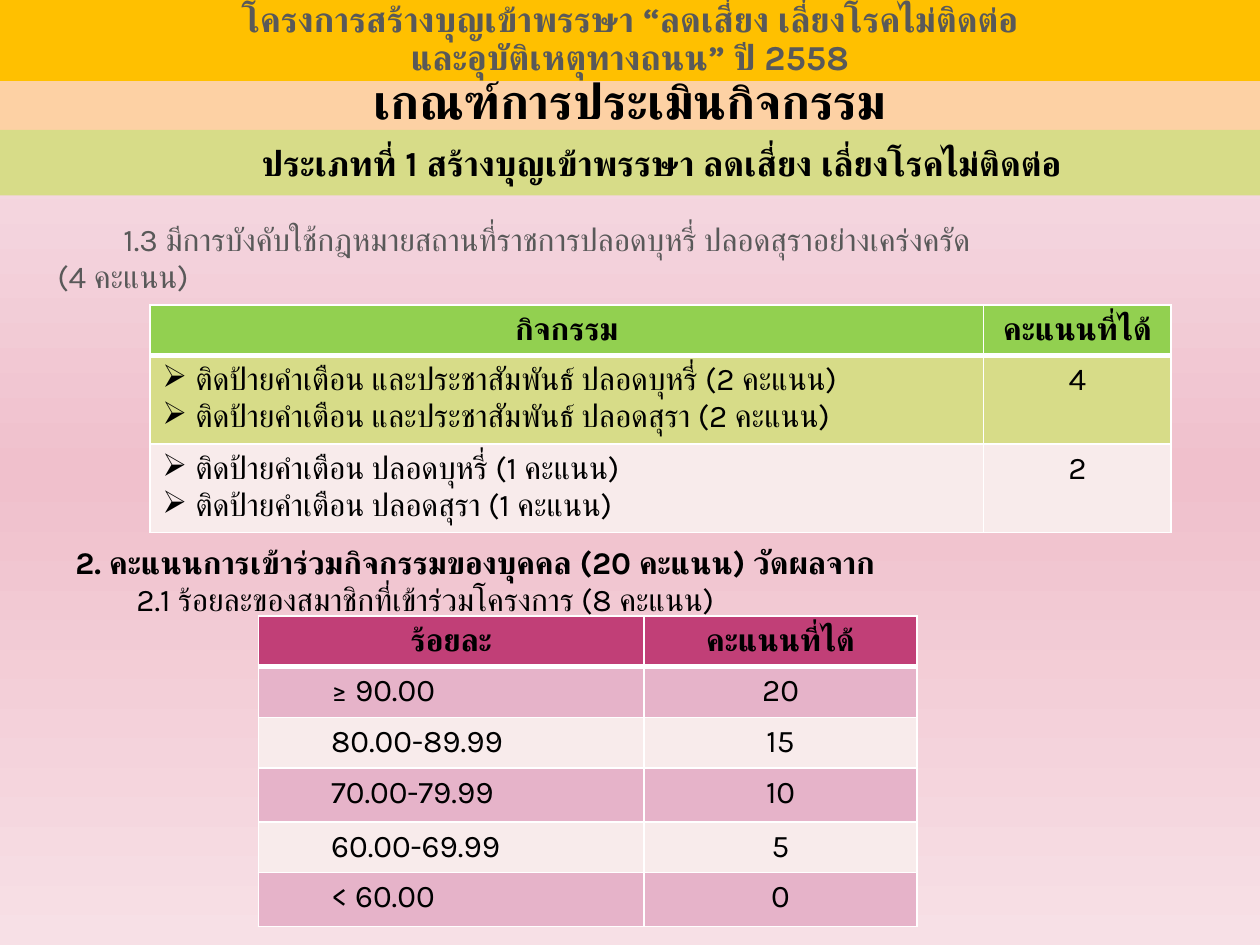
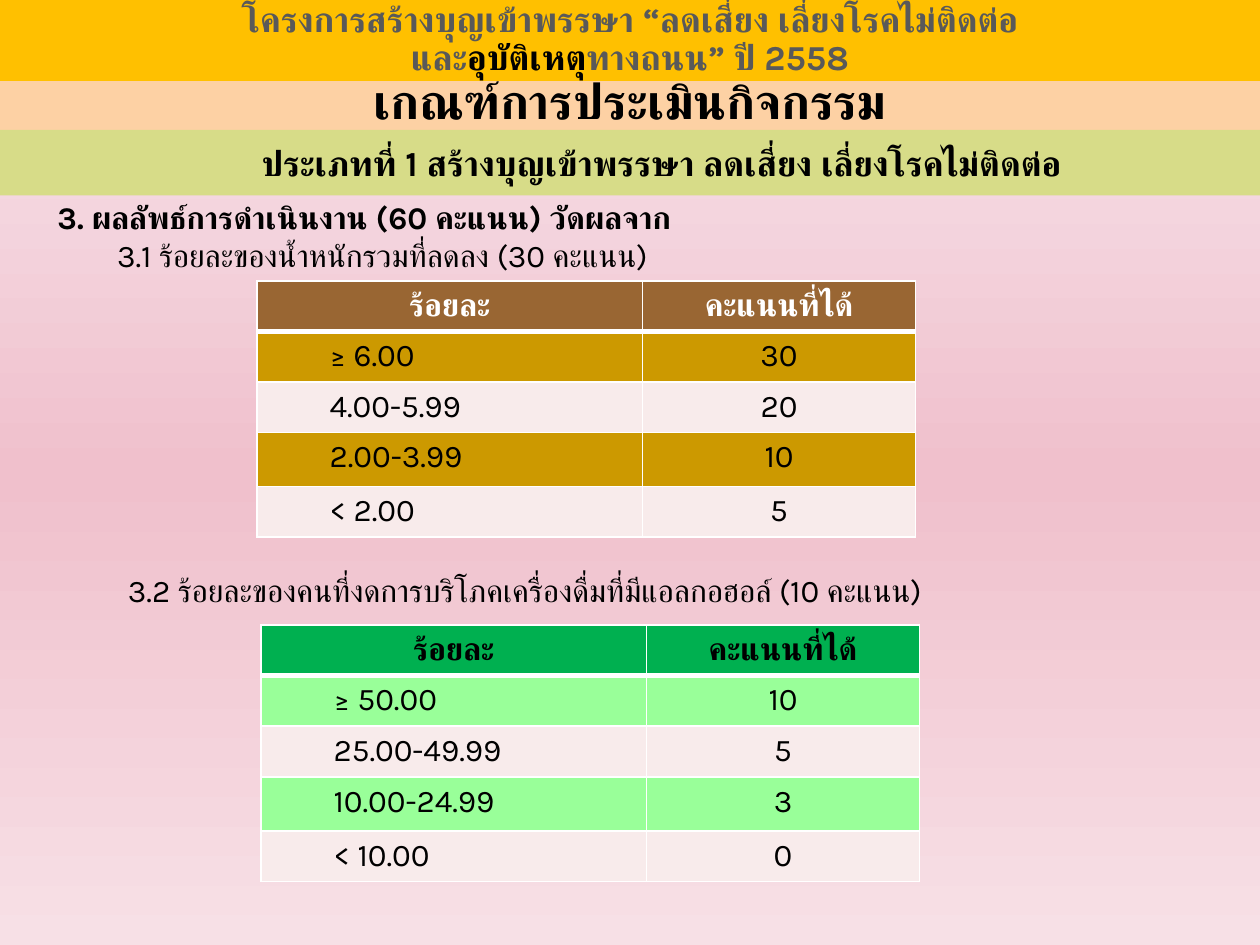
from copy import deepcopy

from lxml import etree
from pptx import Presentation
from pptx.dml.color import RGBColor
from pptx.enum.shapes import MSO_SHAPE
from pptx.enum.text import MSO_ANCHOR, MSO_AUTO_SIZE, PP_ALIGN
from pptx.oxml.ns import qn
from pptx.util import Cm, Pt

RECTANGLE = MSO_SHAPE.RECTANGLE
MIDDLE, BOTTOM = MSO_ANCHOR.MIDDLE, MSO_ANCHOR.BOTTOM
LEFT, CENTER = PP_ALIGN.LEFT, PP_ALIGN.CENTER
NO_FIT = MSO_AUTO_SIZE.NONE

FONT = "Karla"
WIDTH, HEIGHT = 25.4, 19.05
TITLE_ONLY = 5
COLORS = {
    "black": "000000", "white": "FFFFFF", "gray": "595959",
    "amber": "FFC000", "peach": "FDD1A4", "olive": "D7DC88",
    "lime": "92D050", "pale": "F8EBEB",
    "magenta": "C13F77", "rose": "E6B3C9",
    "brown": "996633", "gold": "CC9900",
    "green": "00B050", "mint": "99FF99",
}
BACKGROUND = [(0, "F7E6ED"), (0.5, "F0C0CC"), (1, "F7E0E6")]
SCORE_HEADING = "คะแนนที่ได้"


def rgb(name):
    return RGBColor.from_string(COLORS[name])


def para(*spans, indent=0, first=0, bullet=None, align=LEFT, spacing=None, **font):
    """Describe a paragraph; a span is a text or a (text, colour) pair."""
    return {"spans": spans, "indent": indent, "first": first, "bullet": bullet,
            "format": {"alignment": align, "line_spacing": spacing},
            "font": {"size": 18, "bold": False, "color": "black", **font}}


class Builder:
    """Holds the deck, its style and the current page."""

    def __init__(self):
        self.deck = Presentation()
        self.deck.slide_width, self.deck.slide_height = Cm(WIDTH), Cm(HEIGHT)
        self.page = None

    def add_page(self):
        self.page = self.deck.slides.add_slide(self.deck.slide_layouts[TITLE_ONLY])
        fill = self.page.background.fill
        fill.gradient()
        fill.gradient_angle = 270
        stop_list = self.page.element.find(".//" + qn("a:gsLst"))
        stop_list.append(deepcopy(stop_list[0]))
        for stop, (position, color) in zip(fill.gradient_stops, BACKGROUND):
            stop.position = position
            stop.color.rgb = RGBColor.from_string(color)

    def fill_text(self, frame, paras):
        for index, item in enumerate(paras):
            line = frame.paragraphs[0] if index == 0 else frame.add_paragraph()
            for name, value in item["format"].items():
                setattr(line, name, value)
            properties = line._p.get_or_add_pPr()
            properties.set("marL", str(Cm(item["indent"])))
            properties.set("indent", str(Cm(item["first"])))
            if item["bullet"]:
                bullet = etree.SubElement(properties, qn("a:buChar"))
                bullet.set("char", item["bullet"])
            for span in item["spans"]:
                text, color = (span, item["font"]["color"]) if isinstance(span, str) else span
                self.add_span(line, text, color, item["font"])

    def add_span(self, line, text, color, style):
        span = line.add_run()
        span.text = text
        values = {"name": FONT, "size": Pt(style["size"]), "bold": style["bold"]}
        for name, value in values.items():
            setattr(span.font, name, value)
        span.font.color.rgb = rgb(color)
        # Thai text takes the complex-script typeface
        script = etree.SubElement(span._r.get_or_add_rPr(), qn("a:cs"))
        script.set("typeface", FONT)

    def set_frame(self, frame, anchor):
        values = {"word_wrap": True, "auto_size": NO_FIT, "vertical_anchor": anchor}
        for name, value in values.items():
            setattr(frame, name, value)

    def title(self, top, height, color, line):
        box = self.page.shapes.title
        box.left, box.top, box.width, box.height = Cm(0), Cm(top), Cm(WIDTH), Cm(height)
        box.fill.solid()
        box.fill.fore_color.rgb = rgb(color)
        self.set_frame(box.text_frame, BOTTOM)
        self.fill_text(box.text_frame, [line])

    def band(self, top, height, color, paras):
        box = self.page.shapes.add_shape(RECTANGLE, Cm(0), Cm(top), Cm(WIDTH), Cm(height))
        box.shadow.inherit = False
        box.fill.solid()
        box.fill.fore_color.rgb = rgb(color)
        box.line.fill.background()
        self.set_frame(box.text_frame, MIDDLE)
        self.fill_text(box.text_frame, paras)

    def text(self, left, top, width, height, paras):
        box = self.page.shapes.add_textbox(Cm(left), Cm(top), Cm(width), Cm(height))
        self.set_frame(box.text_frame, MIDDLE)
        self.fill_text(box.text_frame, paras)

    def table(self, left, top, widths, heights, rows, head, stripe):
        """Rows hold cells, and a cell is a list of paragraphs."""
        frame = self.page.shapes.add_table(
            len(rows), len(widths), Cm(left), Cm(top), Cm(sum(widths)), Cm(sum(heights)))
        grid = frame.table
        for column, width in zip(grid.columns, widths):
            column.width = Cm(width)
        for index, (row, height) in enumerate(zip(rows, heights)):
            grid.rows[index].height = Cm(height)
            color = head if index == 0 else stripe if index % 2 else "pale"
            for number, paras in enumerate(row):
                cell = grid.cell(index, number)
                self.add_borders(cell, index)
                cell.fill.solid()
                cell.fill.fore_color.rgb = rgb(color)
                self.fill_text(cell.text_frame, paras)

    def add_borders(self, cell, row):
        weights = {"lnL": 1, "lnR": 1, "lnT": 3 if row == 1 else 1, "lnB": 1 if row else 3}
        properties = cell._tc.get_or_add_tcPr()
        for side, weight in weights.items():
            border = etree.SubElement(properties, qn("a:" + side), w=str(Pt(weight)))
            fill = etree.SubElement(border, qn("a:solidFill"))
            etree.SubElement(fill, qn("a:srgbClr"), val=COLORS["white"])

    def headings(self, *labels, color="black"):
        return [[para(label, align=CENTER, bold=True, color=color)] for label in labels]

    def score_table(self, left, top, scores, head, stripe, head_text="black"):
        rows = [self.headings("ร้อยละ", SCORE_HEADING, color=head_text)]
        rows += [[[para(span, indent=1.21)], [para(score, align=CENTER)]]
                 for span, score in scores]
        heights = [1.09 if index in (3, 5) else 1.02 for index in range(len(rows))]
        self.table(left, top, (7.77, 5.51), heights, rows, head, stripe)

    def page_header(self, accident_color):
        """Title and the two bands that every page carries."""
        self.title(1.52, 1.24, "peach", para(
            "เกณฑ์การประเมินกิจกรรม", align=CENTER, spacing=0.9, size=28, bold=True))
        project = {"align": CENTER, "spacing": 0.9, "size": 20, "bold": True, "color": "gray"}
        self.band(0, 1.63, "amber", [
            para("โครงการสร้างบุญเข้าพรรษา “ลดเสี่ยง เลี่ยงโรคไม่ติดต่อ", **project),
            para("และ", ("อุบัติเหตุ", accident_color), "ทางถนน” ปี 2558", **project)])
        self.band(2.62, 1.32, "olive", [para(
            "ประเภทที่ 1 สร้างบุญเข้าพรรษา ลดเสี่ยง เลี่ยงโรคไม่ติดต่อ",
            align=CENTER, first=1.27, size=20, bold=True)])


def activity_cell(*lines):
    return [para(line, indent=0.67, first=-0.67, bullet="➢") for line in lines]


def build_participation(builder):
    builder.add_page()
    builder.page_header("gray")

    # Law enforcement criterion
    builder.text(0.91, 4.29, 22.83, 1.8, [
        para("1.3 มีการบังคับใช้กฎหมายสถานที่ราชการปลอดบุหรี่ ปลอดสุราอย่างเคร่งครัด",
             first=1.33, color="gray"),
        para("(4 คะแนน)", color="gray")])
    activities = [
        builder.headings("กิจกรรม", SCORE_HEADING),
        [activity_cell("ติดป้ายคำเตือน และประชาสัมพันธ์ ปลอดบุหรี่ (2 คะแนน)",
                       "ติดป้ายคำเตือน และประชาสัมพันธ์ ปลอดสุรา (2 คะแนน)"),
         [para("4", align=CENTER)]],
        [activity_cell("ติดป้ายคำเตือน ปลอดบุหรี่ (1 คะแนน)",
                       "ติดป้ายคำเตือน ปลอดสุรา (1 คะแนน)"),
         [para("2", align=CENTER)]],
    ]
    builder.table(3.02, 6.15, (16.81, 3.78), (1.02, 1.78, 1.78), activities, "lime", "olive")

    # Share of members taking part
    builder.score_table(5.21, 12.42, [
        ("≥ 90.00", "20"), ("80.00-89.99", "15"), ("70.00-79.99", "10"),
        ("60.00-69.99", "5"), ("< 60.00", "0")], "magenta", "rose")
    builder.text(0, 10.8, 20.09, 1.8, [
        para("2. คะแนนการเข้าร่วมกิจกรรมของบุคคล (20 คะแนน) วัดผลจาก", indent=1.27, bold=True),
        para("2.1 ร้อยละของสมาชิกที่เข้าร่วมโครงการ (8 คะแนน)", indent=2.5)])


def build_results(builder):
    builder.add_page()
    builder.page_header("black")

    # Weight loss
    builder.text(0.91, 3.86, 14.38, 1.8, [
        para("3. ผลลัพธ์การดำเนินงาน (60 คะแนน) วัดผลจาก", bold=True),
        para("3.1 ร้อยละของน้ำหนักรวมที่ลดลง (30 คะแนน)", indent=1.2)])
    builder.score_table(5.18, 5.66, [
        ("≥ 6.00", "30"), ("4.00-5.99", "20"), ("2.00-3.99", "10"), ("< 2.00", "5")],
        "brown", "gold", head_text="white")

    # Giving up alcohol
    builder.score_table(5.26, 12.6, [
        ("≥ 50.00", "10"), ("25.00-49.99", "5"), ("10.00-24.99", "3"), ("< 10.00", "0")],
        "green", "mint")
    builder.text(0, 11.07, 21.36, 1.63, [
        para("3.2 ร้อยละของคนที่งดการบริโภคเครื่องดื่มที่มีแอลกอฮอล์ (10 คะแนน)", indent=2.33)])


def main():
    builder = Builder()
    build_participation(builder)
    build_results(builder)
    builder.deck.save("out.pptx")


if __name__ == "__main__":
    main()
